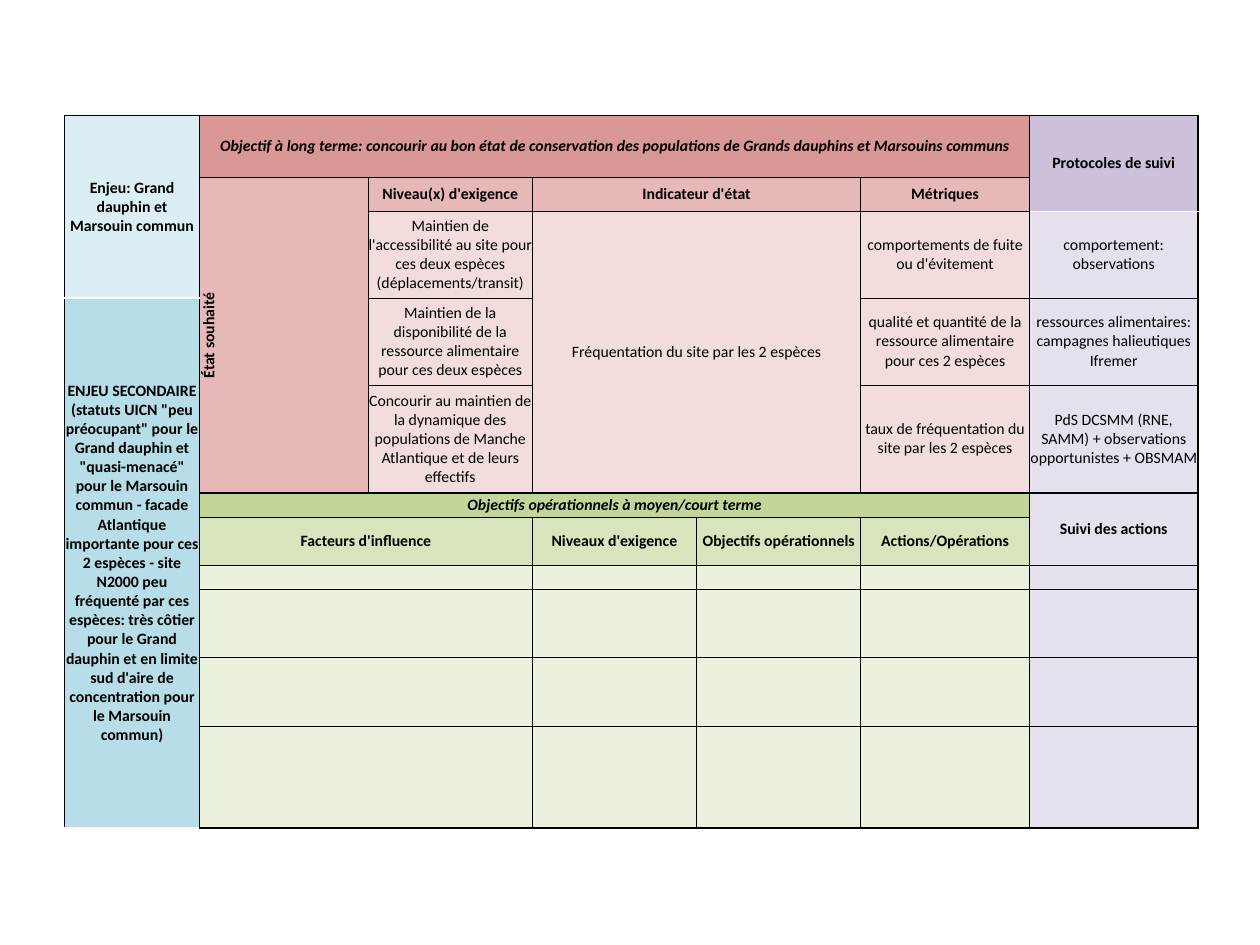
from dataclasses import dataclass

from lxml import etree
from pptx import Presentation
from pptx.dml.color import RGBColor
from pptx.enum.text import MSO_ANCHOR, PP_ALIGN
from pptx.oxml.ns import qn
from pptx.util import Cm, Pt

CENTER = PP_ALIGN.CENTER
MIDDLE = MSO_ANCHOR.MIDDLE


@dataclass(frozen=True)
class Theme:
    font: str = "Calibri"
    size: float = 9
    ink: str = "000000"
    thin: float = 0.5
    thick: float = 1
    issue: str = "DBEEF3"
    issue_detail: str = "B6DDE8"
    goal: str = "D99795"
    goal_head: str = "E6B9B8"
    goal_body: str = "F2DDDC"
    action: str = "C2D69A"
    action_head: str = "D7E4BC"
    action_body: str = "EAF1DD"
    survey_head: str = "CCC0DA"
    survey_body: str = "E5E0EC"


THEME = Theme()

COLUMNS = [2.72, 3.4, 3.31, 3.31, 3.31, 3.4, 3.4]
ROWS = [1.25, 0.68, 1.75, 1.75, 2.18, 0.48, 0.98, 0.48, 1.38, 1.38, 2.05]

# Grid lines that separate the main sections
THICK_COLUMNS = {0, 1, len(COLUMNS)}
THICK_ROWS = {0, 5, len(ROWS)}


@dataclass
class Block:
    row: int
    column: int
    fill: str
    text: str = ""
    rows: int = 1
    columns: int = 1
    bold: bool = False
    italic: bool = False
    vertical: bool = False


def issue_blocks():
    return [
        Block(0, 0, THEME.issue, "Enjeu: Grand dauphin et Marsouin commun", rows=3, bold=True),
        Block(3, 0, THEME.issue_detail,
              'ENJEU SECONDAIRE (statuts UICN "peu préocupant" pour le Grand dauphin et '
              '"quasi-menacé" pour le Marsouin commun - facade Atlantique importante pour '
              "ces 2 espèces - site N2000 peu fréquenté par ces espèces: très côtier pour "
              "le Grand dauphin et en limite sud d'aire de concentration pour le Marsouin "
              "commun)", rows=8, bold=True),
    ]


def goal_blocks():
    blocks = [
        Block(0, 1, THEME.goal,
              "Objectif à long terme: concourir au bon état de conservation des "
              "populations de Grands dauphins et Marsouins communs",
              columns=5, bold=True, italic=True),
        Block(0, 6, THEME.survey_head, "Protocoles de suivi", rows=2, bold=True),
        Block(1, 1, THEME.goal_head, "État souhaité", rows=4, bold=True, vertical=True),
        Block(1, 2, THEME.goal_head, "Niveau(x) d'exigence", bold=True),
        Block(1, 3, THEME.goal_head, "Indicateur d'état", columns=2, bold=True),
        Block(1, 5, THEME.goal_head, "Métriques", bold=True),
        Block(2, 3, THEME.goal_body, "Fréquentation du site par les 2 espèces",
              rows=3, columns=2),
    ]
    details = [
        ("Maintien de l'accessibilité au site pour ces deux espèces (déplacements/transit)",
         "comportements de fuite ou d'évitement",
         "comportement: observations"),
        ("Maintien de la disponibilité de la ressource alimentaire pour ces deux espèces",
         "qualité et quantité de la ressource alimentaire pour ces 2 espèces",
         "ressources alimentaires: campagnes halieutiques Ifremer"),
        ("Concourir au maintien de la dynamique des populations de Manche Atlantique "
         "et de leurs effectifs",
         "taux de fréquentation du site par les 2 espèces",
         "PdS DCSMM (RNE, SAMM) + observations opportunistes + OBSMAM"),
    ]
    for row, (requirement, metric, survey) in enumerate(details, start=2):
        blocks += [
            Block(row, 2, THEME.goal_body, requirement),
            Block(row, 5, THEME.goal_body, metric),
            Block(row, 6, THEME.survey_body, survey),
        ]
    return blocks


def action_blocks():
    blocks = [
        Block(5, 1, THEME.action, "Objectifs opérationnels à moyen/court terme",
              columns=5, bold=True, italic=True),
        Block(5, 6, THEME.survey_body, "Suivi des actions", rows=2, bold=True),
        Block(6, 1, THEME.action_head, "Facteurs d'influence", columns=2, bold=True),
    ]
    heads = ["Niveaux d'exigence", "Objectifs opérationnels", "Actions/Opérations"]
    for column, head in enumerate(heads, start=3):
        blocks.append(Block(6, column, THEME.action_head, head, bold=True))

    # Rows left open for the actions
    for row in range(7, len(ROWS)):
        blocks.append(Block(row, 1, THEME.action_body, columns=2))
        blocks += [Block(row, column, THEME.action_body) for column in (3, 4, 5)]
        blocks.append(Block(row, 6, THEME.survey_body))
    return blocks


def add_border(cell, side, thick):
    width = Pt(THEME.thick if thick else THEME.thin)
    line = etree.SubElement(cell._tc.get_or_add_tcPr(), qn(f"a:ln{side}"), w=str(width))
    fill = etree.SubElement(line, qn("a:solidFill"))
    etree.SubElement(fill, qn("a:srgbClr"), val=THEME.ink)


def style_cell(cell, block):
    cell.margin_left = cell.margin_right = cell.margin_top = cell.margin_bottom = 0
    cell.vertical_anchor = MIDDLE
    cell.fill.solid()
    cell.fill.fore_color.rgb = RGBColor.from_string(block.fill)
    para = cell.text_frame.paragraphs[0]
    para.alignment = CENTER
    para.font.name = THEME.font
    para.font.size = Pt(THEME.size)
    para.font.bold = block.bold
    para.font.italic = block.italic
    para.font.color.rgb = RGBColor.from_string(THEME.ink)


def fill_block(table, block):
    bottom, right = block.row + block.rows, block.column + block.columns
    origin = table.cell(block.row, block.column)
    if block.rows * block.columns > 1:
        origin.merge(table.cell(bottom - 1, right - 1))
    origin.text = block.text
    if block.vertical:
        origin._tc.get_or_add_tcPr().set("vert", "vert270")

    # Borders follow the outline of the merged area
    for row in range(block.row, bottom):
        for column in range(block.column, right):
            cell = table.cell(row, column)
            if column == block.column:
                add_border(cell, "L", column in THICK_COLUMNS)
            if column + 1 == right:
                add_border(cell, "R", right in THICK_COLUMNS)
            if row == block.row:
                add_border(cell, "T", row in THICK_ROWS)
            if row + 1 == bottom:
                add_border(cell, "B", bottom in THICK_ROWS)
            style_cell(cell, block)


def add_objectives_table(page, left, top):
    frame = page.shapes.add_table(len(ROWS), len(COLUMNS), left, top,
                                  Cm(sum(COLUMNS)), Cm(sum(ROWS)))
    table = frame.table
    table.first_row = table.horz_banding = False
    for column, width in zip(table.columns, COLUMNS):
        column.width = Cm(width)
    for row, height in zip(table.rows, ROWS):
        row.height = Cm(height)
    for block in issue_blocks() + goal_blocks() + action_blocks():
        fill_block(table, block)


def main():
    deck = Presentation()
    deck.slide_width, deck.slide_height = Cm(25.4), Cm(19.05)
    page = deck.slides.add_slide(deck.slide_layouts[6])
    add_objectives_table(page, Cm(1.3), Cm(2.33))
    deck.save("out.pptx")


if __name__ == "__main__":
    main()
